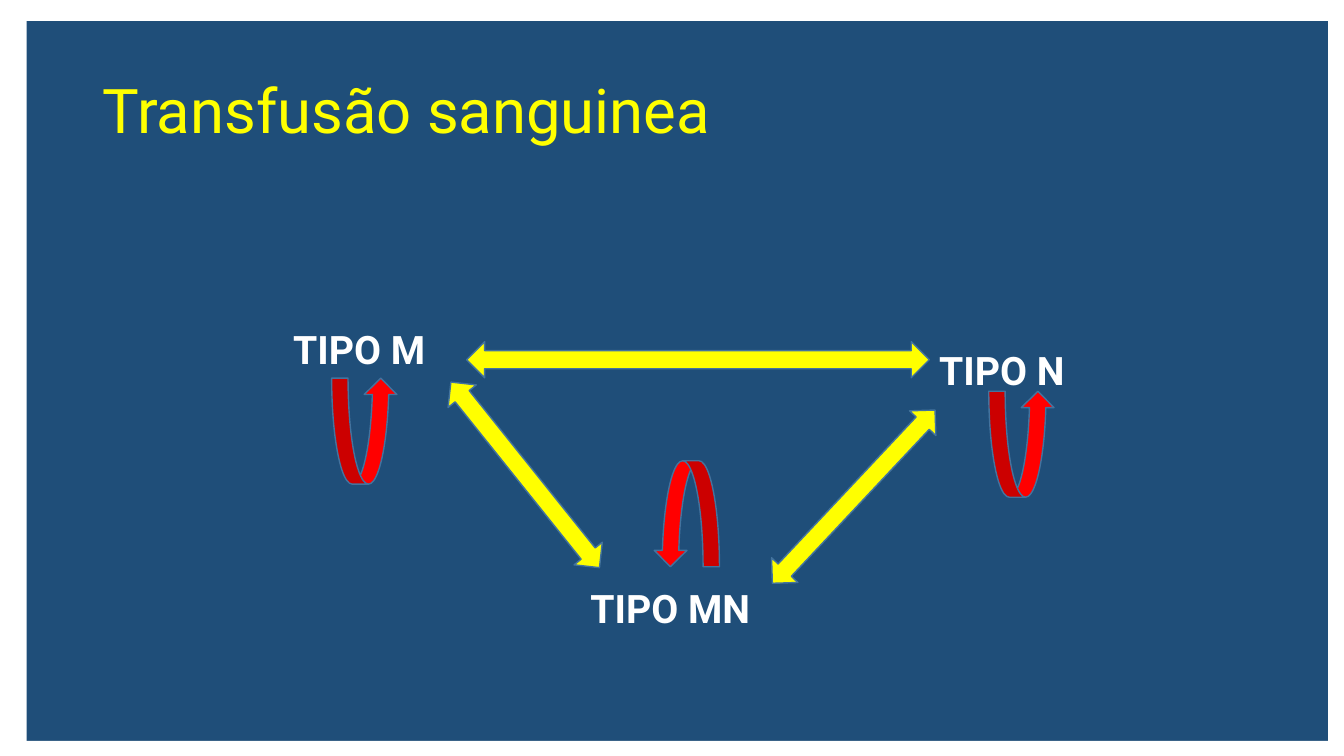
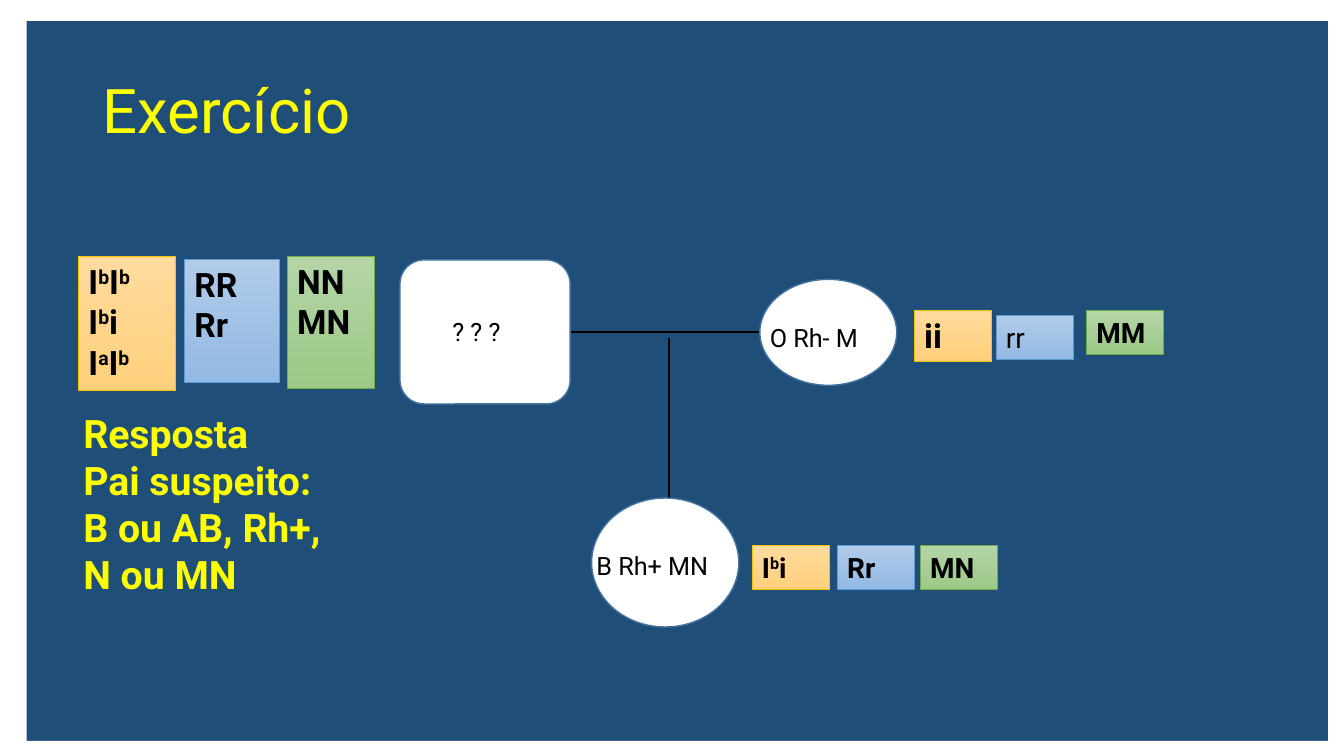
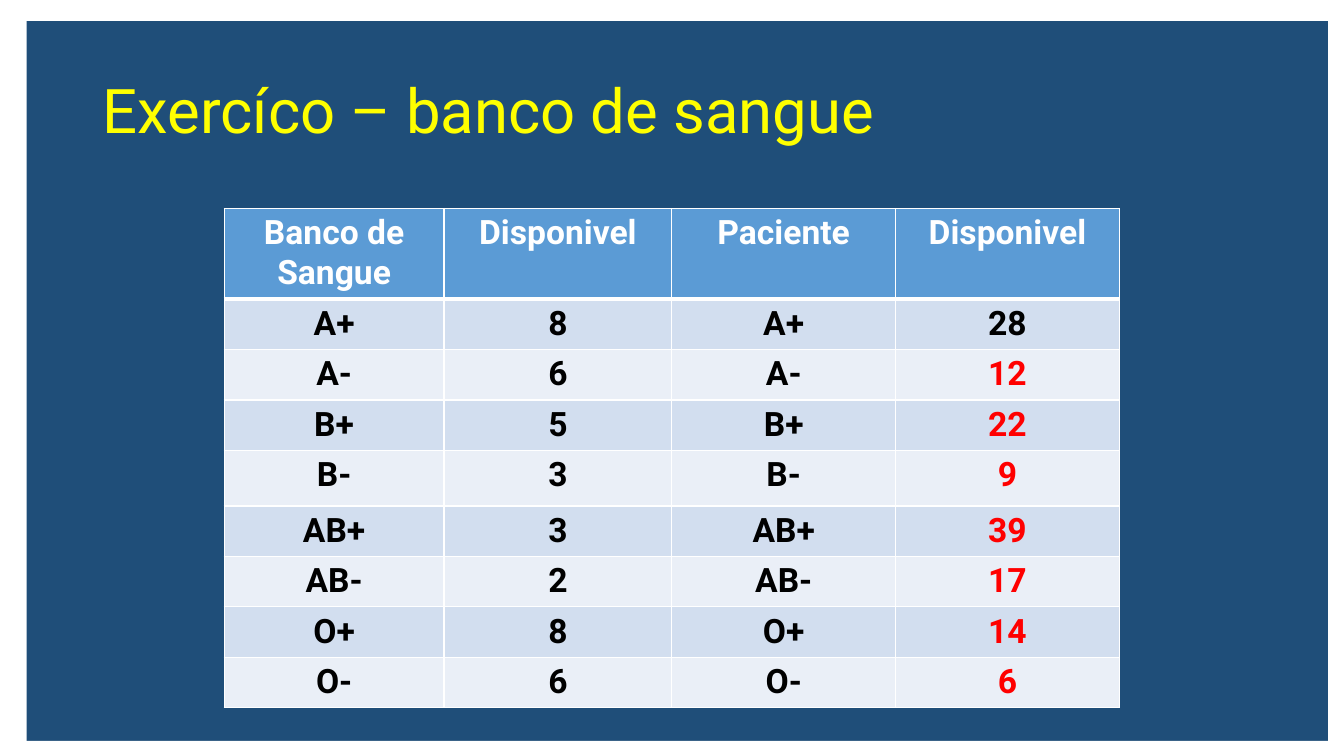
import pptx
import pptx.util
import pptx.dml.color
import pptx.enum.shapes
import pptx.enum.text
import pptx.oxml.ns
import lxml.etree

Cm = pptx.util.Cm
Pt = pptx.util.Pt
Shape = pptx.enum.shapes.MSO_SHAPE
Anchor = pptx.enum.text.MSO_ANCHOR
Align = pptx.enum.text.PP_ALIGN

NAVY, WHITE, BLACK = "1F4E79", "FFFFFF", "000000"
YELLOW, RED, OUTLINE = "FFFF00", "FF0000", "43739E"
FONT = "Roboto"
WIDTH, HEIGHT = 33.87, 19.05


def rgb(value):
    return pptx.dml.color.RGBColor.from_string(value)


def write(holder, text, size=28, color=WHITE, bold=False, align=Align.LEFT,
          anchor=Anchor.TOP, spacing=1.0):
    """Fill a text frame; ^ raises the next letter."""
    frame = holder.text_frame
    frame.word_wrap = True
    frame.vertical_anchor = anchor
    for number, line in enumerate(text.split("\n")):
        para = frame.paragraphs[0] if number == 0 else frame.add_paragraph()
        para.alignment = align
        para.line_spacing = spacing
        first, *rest = line.split("^")
        pieces = [(first, False)]
        for part in rest:
            pieces += [(part[0], True), (part[1:], False)]
        for piece, raised in pieces:
            if not piece:
                continue
            span = para.add_run()
            span.text = piece
            span.font.name = FONT
            span.font.size = Pt(size)
            span.font.bold = bold
            span.font.color.rgb = rgb(color)
            if raised:
                span.font._element.set("baseline", "30000")


deck = pptx.Presentation()
deck.slide_width, deck.slide_height = Cm(WIDTH), Cm(HEIGHT)

# Shared background, white frame bands and title
background = deck.slide_master.background.fill
background.solid()
background.fore_color.rgb = rgb(NAVY)

bands = [
    (0, 0, WIDTH, 0.53),
    (0, 0, 0.67, HEIGHT),
    (0, 18.67, WIDTH, 0.38),
    (33.47, 0, 0.4, HEIGHT),
]
titles = ["Transfusão sanguinea", "Exercício", "Exercíco – banco de sangue"]
pages = []
for title in titles:
    page = deck.slides.add_slide(deck.slide_layouts[6])
    for place in bands:
        band = page.shapes.add_shape(Shape.RECTANGLE, *map(Cm, place))
        band.shadow.inherit = False
        band.fill.solid()
        band.fill.fore_color.rgb = rgb(WHITE)
        band.line.fill.background()
    box = page.shapes.add_textbox(Cm(2.34), Cm(1.02), Cm(29.21), Cm(3.68))
    write(box, title, size=44, color=YELLOW, anchor=Anchor.MIDDLE, spacing=0.9)
    pages.append(page)
transfusion, exercise, blood_bank = pages

# Solid shapes: transfusion arrows, then the family tree
solids = [
    (transfusion, Shape.CURVED_UP_ARROW, RED, 0, (8.36, 9.53, 1.65, 2.67)),
    (transfusion, Shape.CURVED_UP_ARROW, RED, 180, (16.48, 11.61, 1.65, 2.67)),
    (transfusion, Shape.CURVED_UP_ARROW, RED, 0, (24.92, 9.86, 1.65, 2.67)),
    (transfusion, Shape.LEFT_RIGHT_ARROW, YELLOW, 0, (11.76, 8.61, 11.66, 0.91)),
    (transfusion, Shape.LEFT_RIGHT_ARROW, YELLOW, 313.2, (18.52, 12.06, 5.99, 0.91)),
    (transfusion, Shape.LEFT_RIGHT_ARROW, YELLOW, 231.3, (10.24, 11.51, 5.99, 0.91)),
    (exercise, Shape.OVAL, WHITE, 0, (19.15, 7.04, 3.45, 2.67)),
    (exercise, Shape.ROUNDED_RECTANGLE, WHITE, 0, (10.08, 6.55, 4.29, 3.63)),
    (exercise, Shape.OVAL, WHITE, 0, (14.91, 12.55, 3.71, 3.25)),
]

# Family lines lie behind the family shapes
for ends in [(14.38, 8.36, 19.15, 8.36), (16.87, 8.51, 16.87, 14.02)]:
    link = exercise.shapes.add_connector(
        pptx.enum.shapes.MSO_CONNECTOR.STRAIGHT, *map(Cm, ends))
    link.line.color.rgb = rgb(BLACK)
    link.line.width = Pt(1.5)
    lxml.etree.SubElement(link._element.spPr, pptx.oxml.ns.qn("a:effectLst"))

for page, kind, color, angle, place in solids:
    solid = page.shapes.add_shape(kind, *map(Cm, place))
    solid.shadow.inherit = False
    solid.rotation = angle
    solid.fill.solid()
    solid.fill.fore_color.rgb = rgb(color)
    solid.line.color.rgb = rgb(OUTLINE)
    solid.line.width = Pt(1)

# Labels
type_style = dict(size=28, color=WHITE, bold=True)
person_style = dict(size=18, color=BLACK)
answer_style = dict(size=28, color=YELLOW, bold=True)
answer = "Resposta\nPai suspeito:\nB ou AB, Rh+,\nN ou MN"
labels = [
    (transfusion, "TIPO M", type_style, (7.14, 8.08, 4.62, 1.45)),
    (transfusion, "TIPO MN", type_style, (14.63, 14.6, 5.38, 1.45)),
    (transfusion, "TIPO N", type_style, (23.42, 8.61, 4.62, 1.45)),
    (exercise, "O Rh- M", person_style, (19.15, 8, 4.65, 1.02)),
    (exercise, "B Rh+ MN", person_style, (14.78, 13.74, 4.65, 1.02)),
    (exercise, "? ? ?", person_style, (11.15, 7.85, 2.31, 1.02)),
    (exercise, answer, answer_style, (1.85, 10.19, 10.57, 5.05)),
]
for page, text, style, place in labels:
    box = page.shapes.add_textbox(*map(Cm, place))
    write(box, text, **style)

# Genotype boxes: one gradient for each blood system
systems = {
    "ABO": ("FFDB9E", "FFD07C", "FFC000"),
    "Rh": ("B1CBE9", "93B9E4", "5B9BD5"),
    "MN": ("B5D5A7", "9CC987", "70AD47"),
}
genotypes = [
    ("ABO", "I^bI^b\nI^bi\nI^aI^b", 24, True, (1.98, 6.45, 2.44, 3.38)),
    ("Rh", "RR\nRr", 24, True, (4.65, 6.53, 2.39, 3.1)),
    ("MN", "NN\nMN", 24, True, (7.24, 6.45, 2.2, 3.35)),
    ("ABO", "ii", 24, True, (23.04, 7.82, 1.94, 1.28)),
    ("Rh", "rr", 20, False, (25.1, 7.95, 1.94, 1.11)),
    ("MN", "MM", 20, True, (27.38, 7.82, 1.94, 1.11)),
    ("ABO", "I^bi", 20, True, (18.95, 13.74, 1.94, 1.11)),
    ("Rh", "Rr", 20, True, (21.1, 13.74, 1.94, 1.11)),
    ("MN", "MN", 20, True, (23.19, 13.74, 1.94, 1.11)),
]
for system, text, size, bold, place in genotypes:
    top_color, bottom_color, edge_color = systems[system]
    genotype = exercise.shapes.add_shape(Shape.RECTANGLE, *map(Cm, place))
    genotype.shadow.inherit = False
    genotype.fill.gradient()
    genotype.fill.gradient_angle = 270
    for stop, color in zip(genotype.fill.gradient_stops, (top_color, bottom_color)):
        stop.color.rgb = rgb(color)
    genotype.line.color.rgb = rgb(edge_color)
    genotype.line.width = Pt(0.5)
    write(genotype, text, size=size, color=BLACK, bold=bold)

# Blood bank table
rows = [("Banco de Sangue", "Disponivel", "Paciente", "Disponivel")]
stock = [("A+", 8, 28), ("A-", 6, 12), ("B+", 5, 22), ("B-", 3, 9),
         ("AB+", 3, 39), ("AB-", 2, 17), ("O+", 8, 14), ("O-", 6, 6)]
rows += [(group, str(units), group, str(usable)) for group, units, usable in stock]
column_widths = [5.54, 5.74, 5.64, 5.64]
row_heights = [2.23] + [1.25] * 3 + [1.4] + [1.25] * 4

table = blood_bank.shapes.add_table(
    len(rows), len(column_widths), Cm(5.65), Cm(5.25),
    Cm(sum(column_widths)), Cm(sum(row_heights))).table
for column, width in zip(table.columns, column_widths):
    column.width = Cm(width)
for row, height in zip(table.rows, row_heights):
    row.height = Cm(height)

for r, values in enumerate(rows):
    for c, value in enumerate(values):
        cell = table.cell(r, c)
        properties = cell._tc.get_or_add_tcPr()
        for edge in ("lnL", "lnR", "lnT", "lnB"):
            under_header = (r, edge) in [(0, "lnB"), (1, "lnT")]
            border = lxml.etree.SubElement(
                properties, pptx.oxml.ns.qn("a:" + edge),
                w=str(Pt(3 if under_header else 1)))
            paint = lxml.etree.SubElement(border, pptx.oxml.ns.qn("a:solidFill"))
            lxml.etree.SubElement(paint, pptx.oxml.ns.qn("a:srgbClr"), val=WHITE)
        if r == 0:
            fill, color = "5B9BD5", WHITE
        else:
            fill = "D2DEEF" if r % 2 else "EAEFF7"
            color = RED if c == 3 and r > 1 else BLACK
        cell.fill.solid()
        cell.fill.fore_color.rgb = rgb(fill)
        write(cell, value, size=24, color=color, bold=True, align=Align.CENTER)

deck.save("out.pptx")
